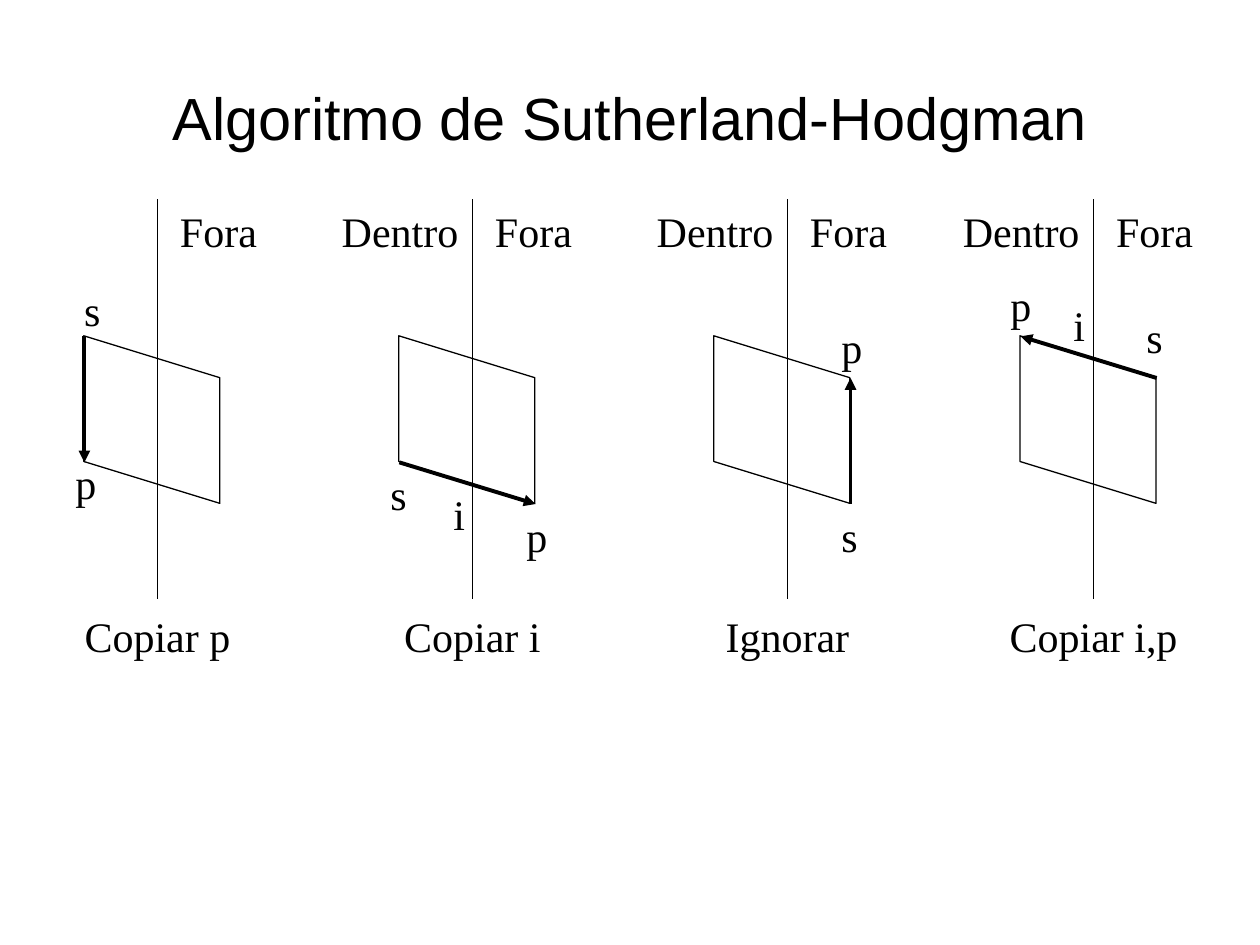
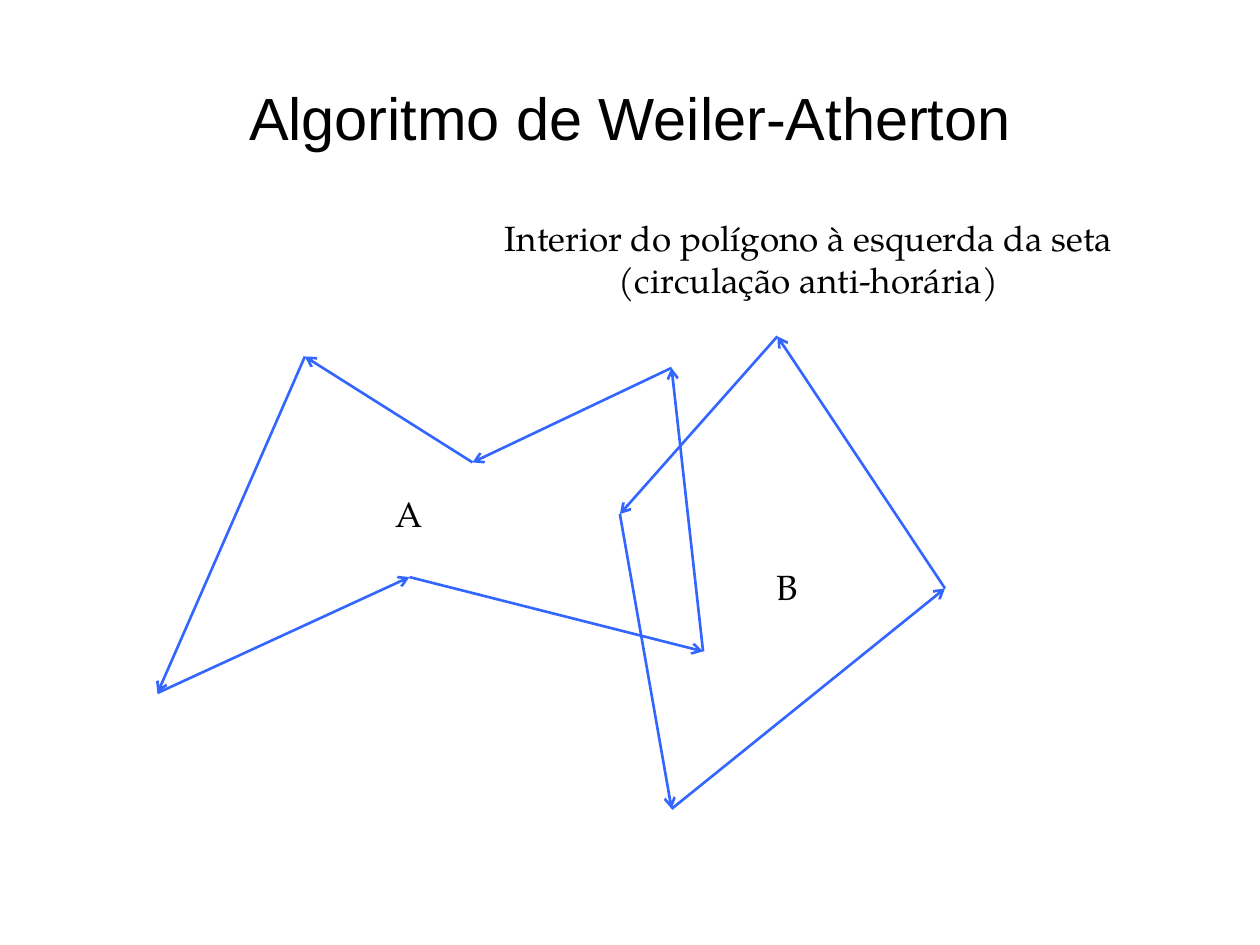
from lxml.etree import SubElement
from pptx import Presentation
from pptx.dml.color import RGBColor
from pptx.enum.shapes import MSO_CONNECTOR, MSO_SHAPE
from pptx.enum.text import MSO_ANCHOR, PP_ALIGN
from pptx.oxml.ns import qn
from pptx.util import Inches, Pt

BLACK = RGBColor(0x00, 0x00, 0x00)
BLUE = RGBColor(0x33, 0x66, 0xFF)
TITLE_FONT = "Arial"
CASE_FONT = "Times New Roman"
POLYGON_FONT = "TeX Gyre Pagella"

CASE_TOP = 1.58
CORNERS = {
    "top left": (-0.58, 1.09),
    "bottom left": (-0.58, 2.09),
    "top right": (0.5, 1.42),
    "bottom right": (0.5, 2.42),
}
LABEL_WIDTHS = {"s": 0.33, "p": 0.37, "i": 0.29}
CASES = [
    (1.25, "Copiar p", False, "top left", "bottom left",
     {"s": (-0.68, 0.63), "p": (-0.75, 2)}),
    (3.75, "Copiar i", True, "bottom left", "bottom right",
     {"s": (-0.75, 2.09), "p": (0.33, 2.42), "i": (-0.25, 2.25)}),
    (6.25, "Ignorar", True, "bottom right", "top right",
     {"s": (0.33, 2.42), "p": (0.33, 0.92)}),
    (8.68, "Copiar i,p", True, "top right", "top left",
     {"s": (0.32, 0.84), "p": (-0.76, 0.59), "i": (-0.26, 0.75)}),
]

POLYGON_A = [(1.25, 5.5), (3.25, 4.58), (5.58, 5.17), (5.33, 2.92), (3.75, 3.67), (2.42, 2.83)]
POLYGON_B = [(4.92, 4.08), (5.33, 6.42), (7.5, 4.67), (6.17, 2.67)]


def add_text(slide, box, lines, font, size, align=PP_ALIGN.LEFT, anchor=MSO_ANCHOR.TOP, wrap=False):
    frame = slide.shapes.add_textbox(*map(Inches, box)).text_frame
    frame.word_wrap = wrap
    frame.vertical_anchor = anchor
    paragraph = frame.paragraphs[0]
    paragraph.alignment = align
    for index, line in enumerate(lines):
        if index:
            paragraph.add_line_break()
        run = paragraph.add_run()
        run.text = line
        run.font.name = font
        run.font.size = Pt(size)
        run.font.color.rgb = BLACK


def add_line(slide, start, end, color, width, arrow=None):
    connector = slide.shapes.add_connector(
        MSO_CONNECTOR.STRAIGHT, *map(Inches, (*start, *end)))
    connector.line.color.rgb = color
    connector.line.width = Pt(width)
    properties = connector.element.spPr
    if arrow:
        SubElement(properties.find(qn("a:ln")), qn("a:tailEnd"), type=arrow)
    SubElement(properties, qn("a:effectLst"))


def add_titled_slide(presentation, title):
    slide = presentation.slides.add_slide(presentation.slide_layouts[6])
    add_text(slide, (0.5, 0.3, 9, 1.25), [title], TITLE_FONT, 34,
             PP_ALIGN.CENTER, MSO_ANCHOR.MIDDLE, True)
    return slide


def add_clipped_window(slide, axis, top):
    window = slide.shapes.add_shape(
        MSO_SHAPE.PARALLELOGRAM,
        *map(Inches, (axis - 0.71, top + 1.21, 1.33, 1.08)))
    window.rotation = 270
    window.adjustments[0] = 0.308
    window.shadow.inherit = False
    window.fill.background()
    window.line.color.rgb = BLACK
    window.line.width = Pt(0.75)


def add_case(slide, axis, top, caption, shows_inside, start, end, labels):
    def place(offset):
        return axis + offset[0], top + offset[1]

    def label(text, offset, width, align=PP_ALIGN.LEFT):
        add_text(slide, (*place(offset), width, 0.5), [text], CASE_FONT, 24, align)

    add_line(slide, place((0, 0)), place((0, 3.17)), BLACK, 0.75)
    if shows_inside:
        label("Dentro", (-1.14, 0), 1.13, PP_ALIGN.CENTER)
    label("Fora", (0.08, 0), 0.81)
    add_clipped_window(slide, axis, top)
    add_line(slide, place(CORNERS[start]), place(CORNERS[end]), BLACK, 2.25, "triangle")
    for text, offset in labels.items():
        label(text, offset, LABEL_WIDTHS[text])
    label(caption, (-0.8, 3.22), 1.6, PP_ALIGN.CENTER)


def add_polygon(slide, vertices, name, name_box):
    for start, end in zip(vertices, vertices[1:] + vertices[:1]):
        add_line(slide, start, end, BLUE, 1.5, "arrow")
    add_text(slide, name_box, [name], POLYGON_FONT, 20, PP_ALIGN.CENTER)


def add_sutherland_hodgman(presentation):
    slide = add_titled_slide(presentation, "Algoritmo de Sutherland-Hodgman")
    for axis, *details in CASES:
        add_case(slide, axis, CASE_TOP, *details)


def add_weiler_atherton(presentation):
    slide = add_titled_slide(presentation, "Algoritmo de Weiler-Atherton")
    add_polygon(slide, POLYGON_A, "A", (3.04, 3.86, 0.42, 0.43))
    add_polygon(slide, POLYGON_B, "B", (6.06, 4.44, 0.37, 0.43))
    add_text(slide, (3.82, 1.67, 5.2, 0.77),
             ["Interior do polígono à esquerda da seta", "(circulação anti-horária)"],
             POLYGON_FONT, 20, PP_ALIGN.CENTER)


def main():
    presentation = Presentation()
    presentation.slide_width = Inches(10)
    presentation.slide_height = Inches(7.5)
    add_sutherland_hodgman(presentation)
    add_weiler_atherton(presentation)
    presentation.save("out.pptx")


if __name__ == "__main__":
    main()
